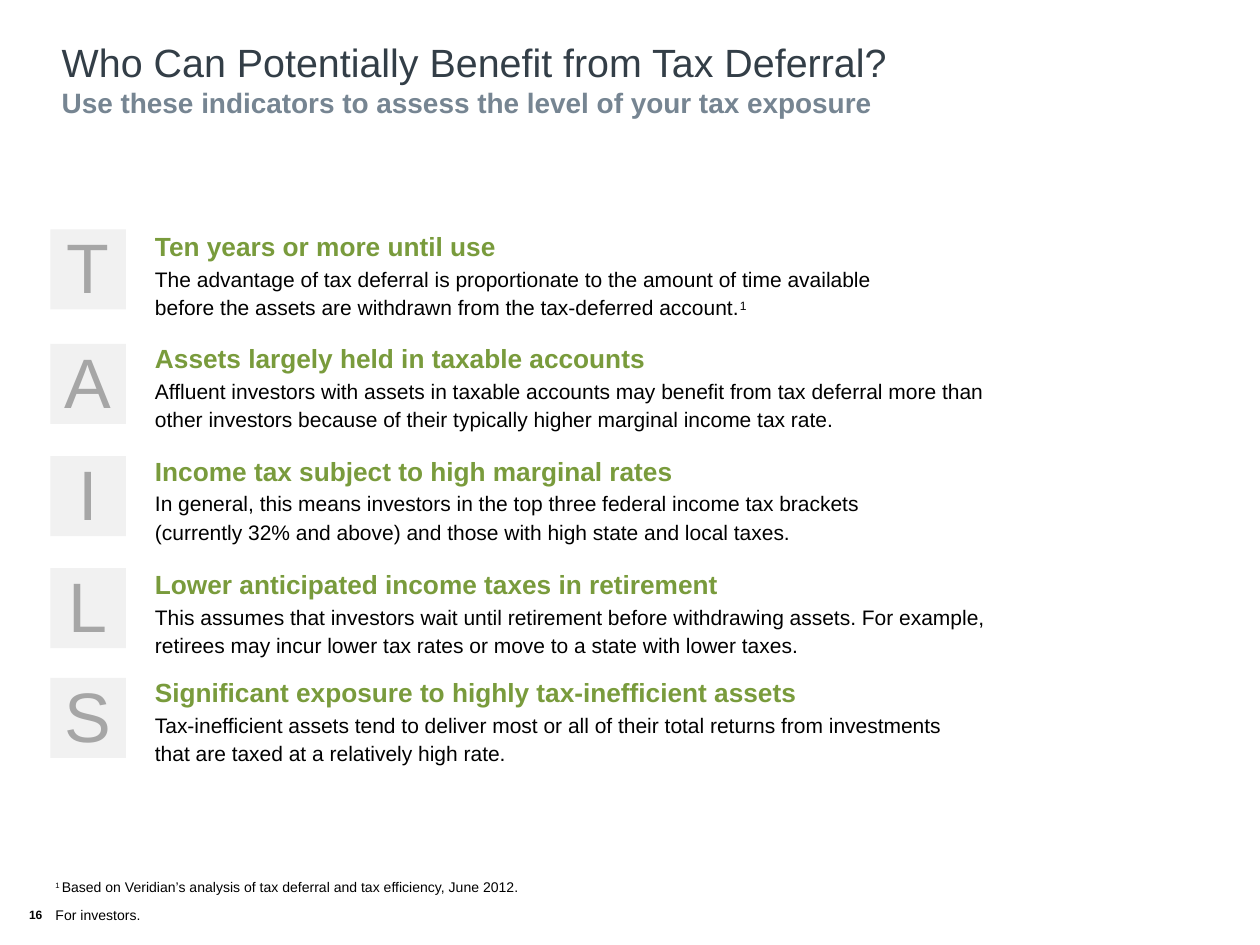
from dataclasses import dataclass
from typing import Optional

from pptx import Presentation
from pptx.dml.color import RGBColor
from pptx.enum.shapes import MSO_SHAPE as Shape
from pptx.enum.text import MSO_ANCHOR as Anchor, PP_ALIGN as Align
from pptx.util import Emu, Inches, Pt

COLUMNS, ROWS = 100, 75
SLIDE_WIDTH, SLIDE_HEIGHT = Inches(10), Inches(7.5)
FONT = "Arial"

TITLE = RGBColor(0x33, 0x3E, 0x47)
SUBTITLE = RGBColor(0x76, 0x85, 0x92)
HEADING = RGBColor(0x79, 0x9B, 0x3C)
BODY = RGBColor(0x00, 0x00, 0x00)
TILE = RGBColor(0xF1, 0xF1, 0xF1)
LETTER = RGBColor(0xA6, 0xA6, 0xA6)

TILE_COLUMN, TILE_SPAN, TILE_DEPTH = 4, 6, 6.35
TEXT_COLUMN, TEXT_DEPTH = 12.3, 7.8


@dataclass(frozen=True)
class Indicator:
    """One letter of the acronym with its explanation and grid rows."""

    letter: str
    heading: str
    body: str
    tile_row: float
    text_row: float
    text_span: float
    note: str = ""


INDICATORS = (
    Indicator(
        "T", "Ten years or more until use",
        "The advantage of tax deferral is proportionate to the amount of time available "
        "before the assets are withdrawn from the tax-deferred account.",
        18.2, 17.6, 57.5, "1"),
    Indicator(
        "A", "Assets largely held in taxable accounts",
        "Affluent investors with assets in taxable accounts may benefit from tax deferral "
        "more than other investors because of their typically higher marginal income tax rate.",
        27.3, 26.5, 66.5),
    Indicator(
        "I", "Income tax subject to high marginal rates",
        "In general, this means investors in the top three federal income tax brackets "
        "(currently 32% and above) and those with high state and local taxes.",
        36.2, 35.4, 57.5),
    Indicator(
        "L", "Lower anticipated income taxes in retirement",
        "This assumes that investors wait until retirement before withdrawing assets. "
        "For example, retirees may incur lower tax rates or move to a state with lower taxes.",
        45.1, 44.4, 66.5),
    Indicator(
        "S", "Significant exposure to highly tax-inefficient assets",
        "Tax-inefficient assets tend to deliver most or all of their total returns from "
        "investments that are taxed at a relatively high rate.",
        53.8, 53, 63),
)


def across(columns: float) -> Emu:
    """Return the length of a number of grid columns."""
    return Emu(round(SLIDE_WIDTH * columns / COLUMNS))


def down(rows: float) -> Emu:
    """Return the length of a number of grid rows."""
    return Emu(round(SLIDE_HEIGHT * rows / ROWS))


def area(column: float, row: float, span: float, depth: float) -> tuple[Emu, Emu, Emu, Emu]:
    """Return left, top, width and height of a grid area."""
    return across(column), down(row), across(span), down(depth)


def prepare(frame, top: float = 0):
    """Clear the insets of a text frame and let it wrap from the top."""
    frame.word_wrap = True
    frame.vertical_anchor = Anchor.TOP
    frame.margin_left = frame.margin_right = frame.margin_bottom = 0
    frame.margin_top = down(top)
    return frame


def write(paragraph, text: str, *, size: float, color: RGBColor = BODY,
          bold: bool = False, raised: int = 0, before: Optional[float] = None,
          spacing=None, align: Optional[Align] = None) -> None:
    """Append formatted text to a paragraph."""
    run = paragraph.add_run()
    run.text = text
    run.font.name = FONT
    run.font.size = Pt(size)
    run.font.bold = bold
    run.font.color.rgb = color
    if raised:
        run.font._element.set("baseline", str(raised * 1000))
    if before is not None:
        paragraph.space_before = Pt(before)
    if spacing is not None:
        paragraph.line_spacing = spacing
    if align is not None:
        paragraph.alignment = align


def draw_heading(slide) -> None:
    """Draw the title and the subtitle."""
    frame = prepare(slide.shapes.add_textbox(*area(4.9, 2.8, 88.7, 7)).text_frame, 0.2)
    write(frame.paragraphs[0], "Who Can Potentially Benefit from Tax Deferral?",
          size=22.5, color=TITLE)
    write(frame.add_paragraph(), "Use these indicators to assess the level of your tax exposure",
          size=16, color=SUBTITLE, bold=True, before=0.2)


def draw_indicator(slide, indicator: Indicator) -> None:
    """Draw a letter tile and the text beside it."""
    tile = slide.shapes.add_shape(
        Shape.RECTANGLE, *area(TILE_COLUMN, indicator.tile_row, TILE_SPAN, TILE_DEPTH))
    tile.shadow.inherit = False
    tile.fill.solid()
    tile.fill.fore_color.rgb = TILE
    tile.line.fill.background()
    write(prepare(tile.text_frame).paragraphs[0], indicator.letter, size=40,
          color=LETTER, spacing=Pt(44.8), align=Align.CENTER)

    explanation = slide.shapes.add_textbox(
        *area(TEXT_COLUMN, indicator.text_row, indicator.text_span, TEXT_DEPTH))
    frame = prepare(explanation.text_frame, 0.7)
    write(frame.paragraphs[0], indicator.heading, size=15, color=HEADING, bold=True)
    body = frame.add_paragraph()
    write(body, indicator.body, size=12, before=0.6, spacing=1.13)
    if indicator.note:
        write(body, indicator.note, size=12, raised=24)


def draw_footer(slide) -> None:
    """Draw the footnote and the page number line."""
    frame = prepare(slide.shapes.add_textbox(*area(1.9, 69.7, 50.2, 3.2)).text_frame)
    footnote, page = frame.paragraphs[0], frame.add_paragraph()
    for paragraph, hang in ((footnote, 0), (page, -2.1)):
        properties = paragraph._p.get_or_add_pPr()
        properties.set("marL", str(across(2.5)))
        properties.set("indent", str(across(hang)))
    write(footnote, "1 ", size=7.5, raised=28)
    write(footnote, "Based on Veridian’s analysis of tax deferral and tax efficiency, June 2012.",
          size=8)
    write(page, "16\t", size=12, bold=True, raised=3, before=2.6)
    write(page, "For investors.", size=8)


def main() -> None:
    """Build the slide and save it."""
    deck = Presentation()
    deck.slide_width, deck.slide_height = SLIDE_WIDTH, SLIDE_HEIGHT
    slide = deck.slides.add_slide(deck.slide_layouts[6])
    draw_heading(slide)
    for indicator in INDICATORS:
        draw_indicator(slide, indicator)
    draw_footer(slide)
    deck.save("out.pptx")


if __name__ == "__main__":
    main()
